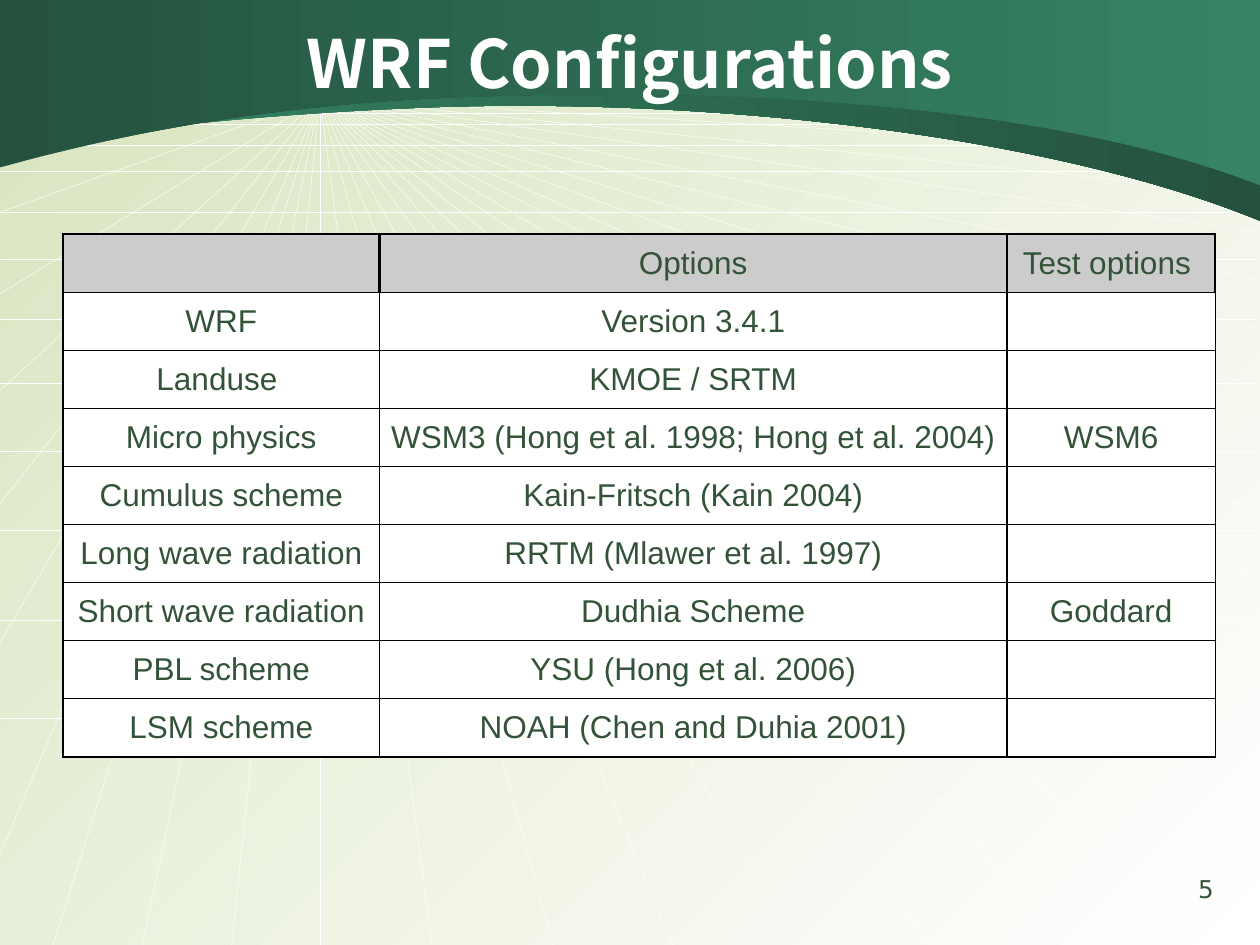
import lxml.etree
import pptx
import pptx.dml.color
import pptx.enum.shapes
import pptx.enum.text
import pptx.oxml
import pptx.oxml.ns
import pptx.util
from pptx.util import Cm

COLORS = {
    "white": "FFFFFF", "black": "000000", "header": "CCCCCC", "text": "335338",
    "pale": "D7E4BE", "light": "368463", "dark": "24523F",
}
LEFT, RIGHT, BOTTOM = -0.03, 25.37, 19.05
VANISHING_POINT = (6.45, 1.98)
RIGHT_RAYS = [2.54, 3.12, 3.91, 4.67, 5.64, 6.63, 7.8, 8.97, 10.31, 11.66, 13.21, 14.96, 17.27]
BOTTOM_RAYS = [1.07, 2.87, 4.67, 6.45, 8.71, 11.15, 13.56, 16, 18.75, 21.49, 24.38]
LEFT_RAYS = [1.98, 2.46, 2.95, 4.29, 5.94, 7.9, 10.19, 13, 17.3]
HORIZONS = [2.13, 2.29, 2.5, 2.93, 3.45, 4.27, 5.23, 6.43, 7.72, 9.09, 10.69, 12.5, 14.48]
# Start point of each lower edge, then two cubic curves of three points each
BACK_EDGE = [(LEFT, 3.02), (0.28, 3), (3.38, 2.36), (8.81, 2.16),
             (14.25, 1.98), (21.11, 2.69), (25.4, 4.45)]
FRONT_EDGE = [(LEFT, 3.38), (0.28, 3.33), (3.84, 2.16), (9.25, 1.96),
              (14.66, 1.75), (21.11, 2.06), (25.4, 3.73)]
COLUMN_WIDTHS = [6.38, 12.65, 4.2]
TABLE_HEIGHT = 10.54
ROWS = [
    ["", "Options", "Test options "],
    ["WRF", "Version 3.4.1", ""],
    ["Landuse ", "KMOE / SRTM", ""],
    ["Micro physics", "WSM3 (Hong et al. 1998; Hong et al. 2004)", "WSM6"],
    ["Cumulus scheme", "Kain-Fritsch (Kain 2004)", ""],
    ["Long wave radiation", "RRTM (Mlawer et al. 1997)", ""],
    ["Short wave radiation", "Dudhia Scheme", "Goddard"],
    ["PBL scheme", "YSU (Hong et al. 2006)", ""],
    ["LSM scheme", "NOAH (Chen and Duhia 2001)", ""],
]


def rgb(name):
    return pptx.dml.color.RGBColor.from_string(COLORS[name])


def set_gradient(fill, start, end, angle):
    fill.gradient()
    fill.gradient_angle = angle
    for stop, name in zip(fill.gradient_stops, (start, end)):
        stop.color.rgb = rgb(name)


def write_text(frame, text, color, alignment, **font_values):
    paragraph = frame.paragraphs[0]
    paragraph.alignment = alignment
    span = paragraph.add_run()
    span.text = text
    span.font.color.rgb = rgb(color)
    for name, value in font_values.items():
        setattr(span.font, name, value)


def add_line(page, start, end):
    line = page.shapes.add_connector(
        pptx.enum.shapes.MSO_CONNECTOR.STRAIGHT, *map(Cm, (*start, *end)))
    line.line.color.rgb = rgb("white")
    line.line.width = pptx.util.Pt(0.25)
    line.element.spPr.append(pptx.oxml.parse_xml(
        f'<a:effectLst {pptx.oxml.ns.nsdecls("a")}/>'))


def add_grid(page):
    """Draw the perspective grid of rays and horizontal lines."""
    ends = [(RIGHT, y) for y in RIGHT_RAYS]
    ends += [(x, BOTTOM) for x in BOTTOM_RAYS]
    ends += [(LEFT, y) for y in LEFT_RAYS]
    for end in ends:
        add_line(page, VANISHING_POINT, end)
    for y in HORIZONS:
        add_line(page, (LEFT, y), (RIGHT, y))


def curve_segments(shape, first, count):
    """Join straight segments, three at a time, into cubic curves."""
    qn = pptx.oxml.ns.qn
    segments = list(shape.element.iter(qn("a:lnTo")))[first:first + count]
    for index in range(0, count, 3):
        group = segments[index:index + 3]
        curve = lxml.etree.Element(qn("a:cubicBezTo"))
        group[0].addprevious(curve)
        for segment in group:
            curve.append(segment[0])
            segment.getparent().remove(segment)


def add_wave(page, edge, start, end):
    """Fill the area between the top of the page and a curved lower edge."""
    builder = page.shapes.build_freeform(Cm(LEFT), 0)
    points = [*edge, (25.4, 0)]
    builder.add_line_segments([(Cm(x), Cm(y)) for x, y in points], close=True)
    wave = builder.convert_to_shape()
    curve_segments(wave, 1, len(edge) - 1)
    wave.shadow.inherit = False
    wave.line.fill.background()
    set_gradient(wave.fill, start, end, 0)


def set_borders(cell, widths):
    """Set widths in points for the left, right, top and bottom borders."""
    properties = cell._tc.get_or_add_tcPr()
    for side, width in zip("LRTB", widths):
        properties.append(pptx.oxml.parse_xml(
            f'<a:ln{side} {pptx.oxml.ns.nsdecls("a")} w="{int(pptx.util.Pt(width))}">'
            f'<a:solidFill><a:srgbClr val="{COLORS["black"]}"/></a:solidFill></a:ln{side}>'))


def border_widths(row, column):
    thin, thick = 0.75, 1.5
    if row == 0:
        return thick, thick, thick, thin
    return (thick if column == 0 else thin, thin, thin,
            thick if row == len(ROWS) - 1 else thin)


def format_cell(cell, row, column):
    side, edge = (0.13, 0.08) if row == 0 else (0.2, 0.1)
    values = {
        "margin_left": Cm(side), "margin_right": Cm(side),
        "margin_top": Cm(edge), "margin_bottom": Cm(edge),
        "vertical_anchor": pptx.enum.text.MSO_ANCHOR.MIDDLE,
    }
    for name, value in values.items():
        setattr(cell, name, value)
    set_borders(cell, border_widths(row, column))
    cell.fill.solid()
    cell.fill.fore_color.rgb = rgb("header" if row == 0 else "white")


def add_options_table(page):
    table = page.shapes.add_table(
        len(ROWS), len(COLUMN_WIDTHS), Cm(1.27), Cm(4.72),
        Cm(sum(COLUMN_WIDTHS)), Cm(TABLE_HEIGHT)).table
    table.first_row = table.horz_banding = False
    for column, width in zip(table.columns, COLUMN_WIDTHS):
        column.width = Cm(width)
    for row, texts in enumerate(ROWS):
        for column, text in enumerate(texts):
            cell = table.cell(row, column)
            format_cell(cell, row, column)
            if text:
                write_text(cell.text_frame, text, "text", pptx.enum.text.PP_ALIGN.CENTER,
                           size=pptx.util.Pt(18), name="Arial")


def place_title(page, text):
    title = page.shapes.title
    page.shapes.element.append(title.element)  # in front of the waves
    values = {"left": 1.27, "top": 0.19, "width": 22.86, "height": 2.11}
    for name, value in values.items():
        setattr(title, name, Cm(value))
    title.text_frame.vertical_anchor = pptx.enum.text.MSO_ANCHOR.MIDDLE
    write_text(title.text_frame, text, "white", pptx.enum.text.PP_ALIGN.CENTER,
               size=pptx.util.Pt(38), name="Noto Sans CJK KR", bold=True)


def add_page_number(page, number):
    box = page.shapes.add_textbox(Cm(21.49), Cm(17.5), Cm(3.23), Cm(1.02))
    box.text_frame.word_wrap = True
    write_text(box.text_frame, number, "text", pptx.enum.text.PP_ALIGN.RIGHT,
               size=pptx.util.Pt(14), name="DejaVu Sans")


def main():
    deck = pptx.Presentation()
    deck.slide_width, deck.slide_height = Cm(25.4), Cm(19.05)
    page = deck.slides.add_slide(deck.slide_layouts[5])
    set_gradient(page.background.fill, "pale", "white", 315)
    add_grid(page)
    add_wave(page, BACK_EDGE, "light", "dark")
    add_wave(page, FRONT_EDGE, "dark", "light")
    add_options_table(page)
    place_title(page, "WRF Configurations")
    add_page_number(page, "5")
    deck.save("out.pptx")


if __name__ == "__main__":
    main()
